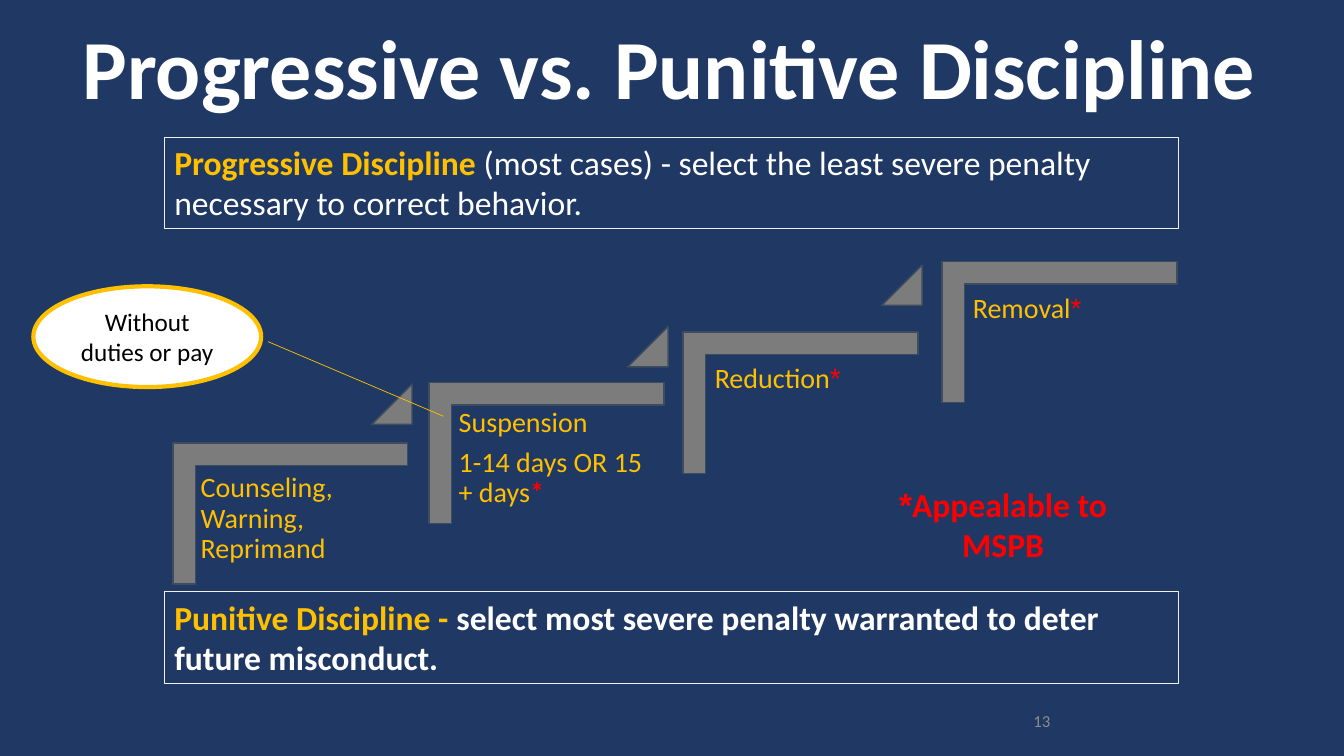
from lxml import etree
from pptx import Presentation
from pptx import util as u
from pptx.dml.color import RGBColor
from pptx.enum import shapes, text
from pptx.oxml import ns

WIDTH, HEIGHT = u.Inches(13.33), u.Inches(7.5)
COLORS = {
    "navy": "203864", "white": "FFFFFF", "black": "000000", "gold": "FFC000",
    "red": "FF0000", "gray": "7C7C7C", "slate": "3E4C60", "pale": "F1F0F0",
    "muted": "8C8C8C",
}
LEFT, CENTER, RIGHT = text.PP_ALIGN.LEFT, text.PP_ALIGN.CENTER, text.PP_ALIGN.RIGHT
TOP, MIDDLE = text.MSO_ANCHOR.TOP, text.MSO_ANCHOR.MIDDLE
STAR = ("*", "red", False, "Arial")
STEPS = [
    ((12.86, 58.6), (14.33, 61.6, 15.75, 14.53), 50.8,
     [[("Counseling, Warning, Reprimand", "gold")]]),
    ((31.91, 50.6), (33.53, 52.93, 15.23, 24.53), 43.2,
     [[("Suspension", "gold")],
      [("1-14 days OR 15 + days", "gold"), ("*", "red", True)]]),
    ((50.81, 43.93), (52.58, 47.07, 15.75, 22.27), 35.07,
     [[("Reduction", "gold"), STAR]]),
    ((70.09, 34.6), (71.78, 37.87, 15.75, 24.53), None,
     [[("Removal", "gold"), STAR]]),
]


def rgb(name):
    """Return the named colour."""
    return RGBColor.from_string(COLORS[name])


def across(share):
    """Convert a percentage of the slide width to a length."""
    return u.Emu(round(WIDTH * share / 100))


def down(share):
    """Convert a percentage of the slide height to a length."""
    return u.Emu(round(HEIGHT * share / 100))


def area(left, top, width, height):
    """Convert percentages of the slide to a position and size."""
    return across(left), down(top), across(width), down(height)


def write(shape, paragraphs, size, align=LEFT, anchor=TOP, spacing=None, after=0):
    """Fill a shape with paragraphs of (text, colour, bold, font) runs."""
    frame = shape.text_frame
    frame.word_wrap = True
    frame.auto_size = text.MSO_AUTO_SIZE.NONE
    frame.vertical_anchor = anchor
    for index, runs in enumerate(paragraphs):
        paragraph = frame.add_paragraph() if index else frame.paragraphs[0]
        paragraph.alignment = align
        paragraph.line_spacing = spacing
        paragraph.space_after = u.Pt(after)
        for words, color, *style in runs:
            run = paragraph.add_run()
            run.text = words
            run.font.size = u.Pt(size)
            run.font.color.rgb = rgb(color)
            run.font.bold = style[0] if style else False
            run.font.name = style[1] if len(style) > 1 else "Calibri"


def add_figure(slide, kind, box, line, weight, fill=None):
    """Add a preset shape with a flat fill and outline."""
    shape = slide.shapes.add_shape(kind, *box)
    shape.shadow.inherit = False
    if fill:
        shape.fill.solid()
        shape.fill.fore_color.rgb = rgb(fill)
    else:
        shape.fill.background()
    shape.line.color.rgb = rgb(line)
    shape.line.width = u.Pt(weight)
    return shape


def add_label(slide, box, paragraphs, size, **layout):
    """Add a text box."""
    shape = slide.shapes.add_textbox(*area(*box))
    write(shape, paragraphs, size, **layout)
    return shape


def add_definition(slide, top, runs):
    """Add an outlined definition box."""
    box = area(12.23, top, 75.45, 12.13)
    shape = add_figure(slide, shapes.MSO_SHAPE.RECTANGLE, box, "pale", 0.75)
    write(shape, [runs], 24)


def make_corner(shape, thickness):
    """Give a shape the corner preset with arms of the given thickness."""
    geometry = shape._element.spPr.find(ns.qn("a:prstGeom"))
    geometry.set("prst", "corner")
    guides = geometry.find(ns.qn("a:avLst"))
    for name in ("adj1", "adj2"):
        etree.SubElement(guides, ns.qn("a:gd"), name=name,
                         fmla=f"val {round(thickness * 100000)}")


def add_step(slide, corner, label_box, triangle_top, paragraphs):
    """Add one stair with its label and the triangle leading upwards."""
    left, top, width, height = area(*corner, 17.48, 18.67)
    shift = (width - height) // 2
    stair = add_figure(slide, shapes.MSO_SHAPE.RECTANGLE,
                       (left + shift, top - shift, height, width), "slate", 1, "gray")
    stair.rotation = 90
    make_corner(stair, 0.16)
    label = add_label(slide, label_box, paragraphs, 20, spacing=0.9, after=7)
    frame = label.text_frame
    frame.margin_left = frame.margin_right = u.Inches(0.08)
    frame.margin_top = frame.margin_bottom = u.Inches(0.08)
    if triangle_top is not None:
        box = area(corner[0] + 14.8, triangle_top, 3, 5.33)
        triangle = add_figure(slide, shapes.MSO_SHAPE.ISOSCELES_TRIANGLE,
                              box, "slate", 1, "gray")
        triangle.adjustments[0] = 1


def add_callout(slide):
    """Add the oval remark and its line to the suspension step."""
    oval = add_figure(slide, shapes.MSO_SHAPE.OVAL, area(2.48, 37.87, 16.95, 13.33),
                      "gold", 3, "white")
    write(oval, [[("Without duties or pay", "black")]], 18, CENTER, MIDDLE)
    pointer = slide.shapes.add_connector(
        shapes.MSO_CONNECTOR.STRAIGHT,
        across(33), down(55.07), across(19.95), down(45.2))
    pointer.line.color.rgb = rgb("gold")
    pointer.line.width = u.Pt(0.5)
    etree.SubElement(pointer._element.spPr, ns.qn("a:effectLst"))


def add_title(slide):
    """Place and fill the title placeholder."""
    title = slide.shapes.title
    title.left, title.top, title.width, title.height = area(0.83, 2.13, 97.95, 14.8)
    write(title, [[("Progressive vs. Punitive Discipline", "white", True)]], 60,
          CENTER, MIDDLE, 0.9)


def main():
    """Build and save the slide."""
    presentation = Presentation()
    presentation.slide_width, presentation.slide_height = WIDTH, HEIGHT
    slide = presentation.slides.add_slide(presentation.slide_layouts[5])
    slide.background.fill.solid()
    slide.background.fill.fore_color.rgb = rgb("navy")
    add_title(slide)
    for step in STEPS:
        add_step(slide, *step)
    add_definition(slide, 18.13, [
        ("Progressive Discipline ", "gold", True),
        ("(most cases) - select the least severe penalty necessary to correct behavior.",
         "white")])
    add_definition(slide, 78.27, [
        ("Punitive Discipline - ", "gold", True),
        ("select most severe penalty warranted to deter future misconduct.",
         "white", True)])
    add_label(slide, (65.78, 63.33, 17.7, 12.13),
              [[("*", "red", True, "Arial"), ("Appealable to MSPB", "red", True)]],
              24, align=CENTER)
    add_callout(slide)
    add_label(slide, (70.65, 92.67, 8.25, 5.33), [[("13", "muted")]], 12,
              align=RIGHT, anchor=MIDDLE)
    presentation.save("out.pptx")


if __name__ == "__main__":
    main()
